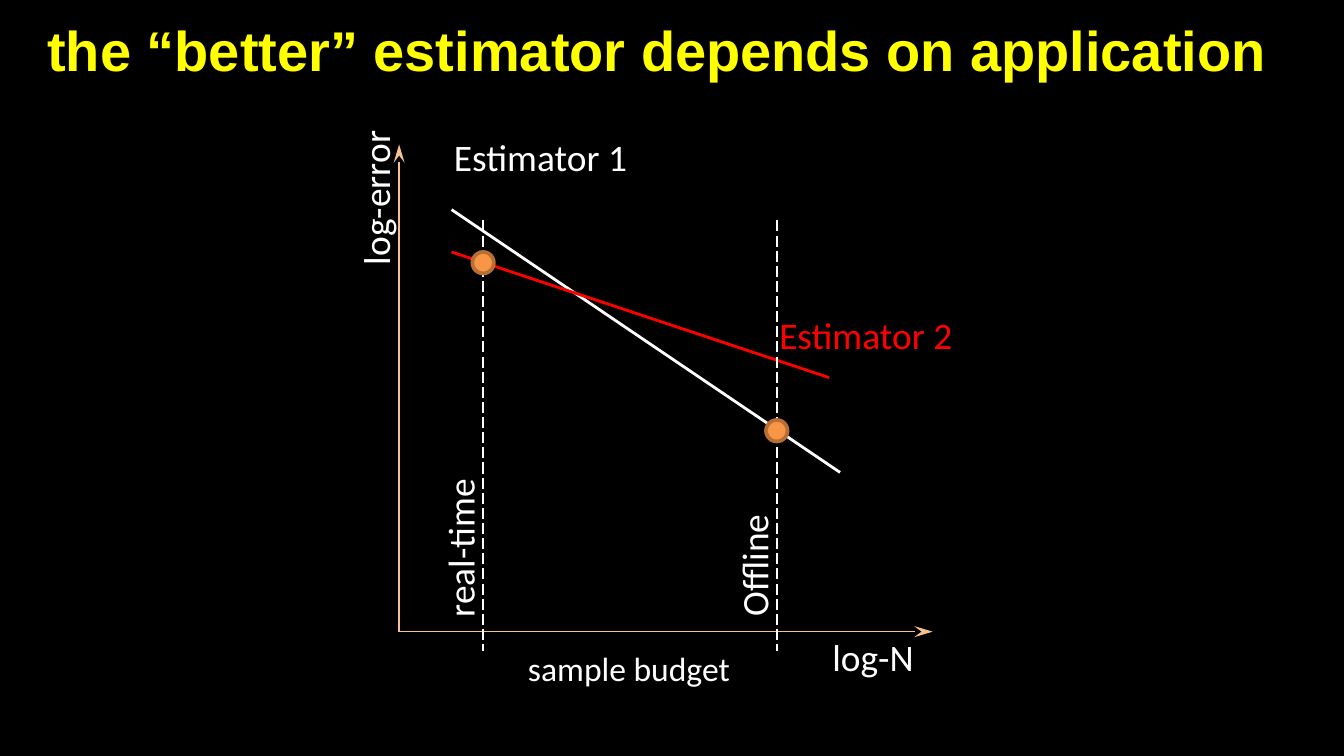
from lxml.etree import SubElement
from pptx import Presentation
from pptx.dml.color import RGBColor
from pptx.enum.dml import MSO_LINE
from pptx.enum.shapes import MSO_CONNECTOR, MSO_SHAPE
from pptx.enum.text import MSO_ANCHOR, MSO_AUTO_SIZE, PP_ALIGN
from pptx.oxml.ns import qn
from pptx.util import Pt

EMU_PER_PX = 4572  # 200 px to the inch
SLIDE_WIDTH, SLIDE_HEIGHT = 2000, 1125

BLACK, WHITE, RED, YELLOW = "000000", "FFFFFF", "FF0000", "FFFF00"
AXIS_COLOR, DOT_FILL, DOT_EDGE = "FAC090", "F79646", "B76F34"

TITLE = "the “better” estimator depends on application"
TITLE_BOX = (34, 16, 1888, 114)

ORIGIN = (594, 940)
AXIS_TIPS = [(594, 215), (1388, 940)]

# start, end, colour
ESTIMATORS = [
    ((1250, 703), (672, 312), WHITE),
    ((1234, 562), (672, 375), RED),
]

# x of each sample budget, y of the better estimator there
BUDGETS = [(719, 391), (1156, 641)]
BUDGET_TOP, BUDGET_BOTTOM = 328, 969
DOT_SIZE = 32

# text, (left, top, width, height), size, colour, rotation
LABELS = [
    ("log-error", (438, 249, 242, 88), 20, WHITE, 270),
    ("log-N", (1219, 934, 162, 88), 20, WHITE, 0),
    ("Estimator 1", (656, 190, 300, 88), 20, WHITE, 0),
    ("Estimator 2", (1140, 454, 300, 88), 20, RED, 0),
    ("real-time", (560, 769, 250, 88), 20, WHITE, 270),
    ("Offline", (1025, 796, 194, 88), 20, WHITE, 270),
    ("sample budget", (766, 954, 344, 80), 18, WHITE, 0),
]


def px(*lengths):
    return [length * EMU_PER_PX for length in lengths]


def rgb(color):
    return RGBColor.from_string(color)


def set_font(paragraph, name, size, color, bold=False):
    font = paragraph.font
    font.name, font.size, font.bold = name, Pt(size), bold
    font.color.rgb = rgb(color)


def add_line(slide, start, end, color, width, dashed=False, arrow=False):
    connector = slide.shapes.add_connector(
        MSO_CONNECTOR.STRAIGHT, *px(*start, *end))
    connector.line.color.rgb = rgb(color)
    connector.line.width = Pt(width)
    if dashed:
        connector.line.dash_style = MSO_LINE.LONG_DASH
    properties = connector._element.spPr
    if arrow:
        SubElement(properties.find(qn("a:ln")), qn("a:tailEnd"),
                   type="stealth", w="med", len="lg")
    SubElement(properties, qn("a:effectLst"))


def add_label(slide, text, box, size, color, rotation):
    label = slide.shapes.add_textbox(*px(*box))
    label.rotation = rotation
    frame = label.text_frame
    frame.word_wrap = False
    frame.auto_size = MSO_AUTO_SIZE.SHAPE_TO_FIT_TEXT
    frame.text = text
    set_font(frame.paragraphs[0], "Calibri", size, color)


def add_dot(slide, x, y):
    """Add a dot centred on x, y."""
    dot = slide.shapes.add_shape(
        MSO_SHAPE.OVAL,
        *px(x - DOT_SIZE // 2, y - DOT_SIZE // 2, DOT_SIZE, DOT_SIZE))
    dot.shadow.inherit = False
    dot.fill.solid()
    dot.fill.fore_color.rgb = rgb(DOT_FILL)
    dot.line.color.rgb = rgb(DOT_EDGE)
    dot.line.width = Pt(2)


def set_title(slide):
    title = slide.shapes.title
    title.left, title.top, title.width, title.height = px(*TITLE_BOX)
    frame = title.text_frame
    frame.text = TITLE
    frame.vertical_anchor = MSO_ANCHOR.MIDDLE
    frame.auto_size = MSO_AUTO_SIZE.NONE
    frame.margin_left, frame.margin_right = px(18, 18)
    frame.margin_top, frame.margin_bottom = px(8, 8)
    frame.paragraphs[0].alignment = PP_ALIGN.CENTER
    set_font(frame.paragraphs[0], "Arial", 30, YELLOW, bold=True)


def main():
    deck = Presentation()
    deck.slide_width, deck.slide_height = px(SLIDE_WIDTH, SLIDE_HEIGHT)
    slide = deck.slides.add_slide(deck.slide_layouts[5])
    slide.background.fill.solid()
    slide.background.fill.fore_color.rgb = rgb(BLACK)

    set_title(slide)
    for tip in AXIS_TIPS:
        add_line(slide, ORIGIN, tip, AXIS_COLOR, 0.75, arrow=True)
    for start, end, color in ESTIMATORS:
        add_line(slide, start, end, color, 1.5)
    for x, _ in BUDGETS:
        add_line(slide, (x, BUDGET_TOP), (x, BUDGET_BOTTOM), WHITE, 0.75, dashed=True)
    for label in LABELS:
        add_label(slide, *label)
    for x, y in BUDGETS:
        add_dot(slide, x, y)

    deck.save("out.pptx")


if __name__ == "__main__":
    main()
